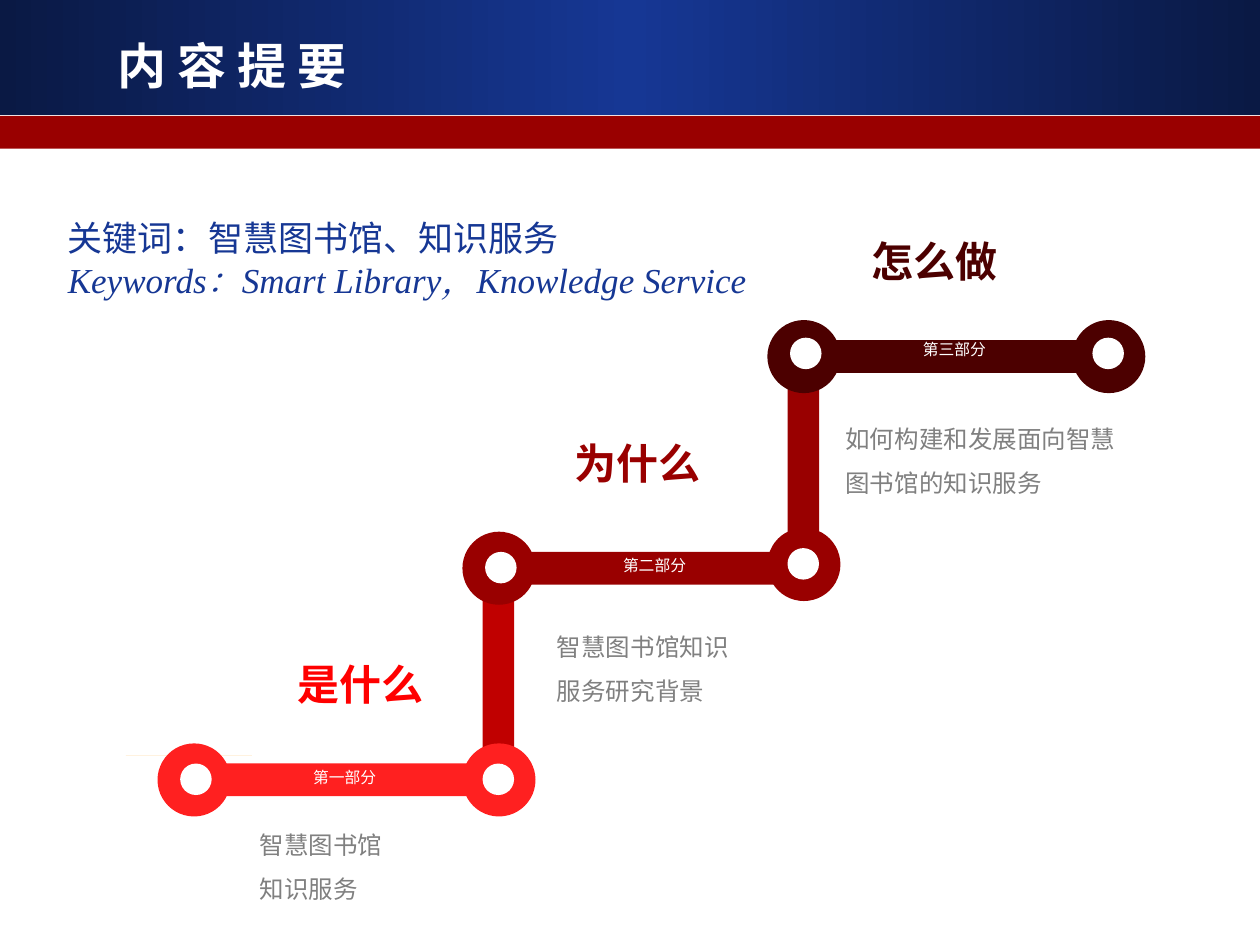
from copy import deepcopy
from dataclasses import dataclass
from typing import Optional

from pptx import Presentation
from pptx.dml.color import RGBColor
from pptx.enum.shapes import MSO_SHAPE as Shape
from pptx.enum.text import MSO_ANCHOR as Anchor, MSO_AUTO_SIZE as AutoSize, PP_ALIGN as Align
from pptx.oxml.ns import qn
from pptx.util import Inches, Pt

SANS, SERIF = "Noto Sans CJK SC", "Times New Roman"
COLORS = {
    "navy": "0A1944", "blue": "163794", "white": "FFFFFF", "grey": "808080",
    "orange": "FF9802", "bright": "FF2020", "red": "FF0000",
    "crimson": "C00000", "dark": "990000", "maroon": "4C0000",
}
RING, HOLE, BAR_W, BAR_H = 0.58, 0.25, 2.63, 0.26
RISER_W, RISER_H = 0.25, 2.1
STEP_X = 2.42


@dataclass
class Run:
    text: str
    size: float
    color: str
    font: str = SANS
    bold: bool = False
    italic: bool = False


@dataclass
class TextBox:
    box: tuple[float, float, float, float]
    lines: list[Run]
    inset: tuple[float, float] = (0.24, 0.12)
    align: Align = Align.LEFT
    wrap: bool = False
    spacing: Optional[float] = None
    autosize: AutoSize = AutoSize.SHAPE_TO_FIT_TEXT
    anchor: Anchor = Anchor.TOP


@dataclass
class Stage:
    """One stair: ring, bar, ring, and the riser up to the next stair."""
    y: float
    end_y: float
    color: str
    label: str
    label_at: tuple[float, float]
    hole_dy: float = 0.16
    riser_y: Optional[float] = None
    riser_color: str = "dark"


STAGES = [
    Stage(5.9, 5.9, "bright", "第一部分", (2.45, 6.09), riser_y=4.37, riser_color="crimson"),
    Stage(4.22, 4.19, "dark", "第二部分", (4.91, 4.41), riser_y=2.66),
    Stage(2.54, 2.54, "maroon", "第三部分", (7.29, 2.7), hole_dy=0.14),
]


def body(box: tuple[float, float, float, float], *lines: str) -> TextBox:
    return TextBox(box, [Run(t, 14, "grey") for t in lines], wrap=True, spacing=1.5)


def heading(text: str, color: str) -> list[Run]:
    return [Run(text, 24, color, bold=True)]


TEXTS = [
    TextBox((0.84, 0.25, 2, 0.53), [Run("内 容 提 要", 28, "white", bold=True)], (0, 0.05),
            Align.CENTER, autosize=AutoSize.NONE, anchor=Anchor.MIDDLE),
    TextBox((0.44, 1.67, 6.06, 0.77),
            [Run("关键词：智慧图书馆、知识服务", 20, "blue"),
             Run("Keywords：Smart Library，Knowledge Service", 20, "blue", SERIF, italic=True)],
            (0.1, 0.05), wrap=True),
    TextBox((6.68, 1.75, 1.49, 0.65), heading("怎么做", "maroon")),
    TextBox((4.32, 3.35, 1.69, 0.74), heading("为什么", "dark")),
    TextBox((1.96, 5.13, 1.6, 0.69), heading("是什么", "red"), (0.2, 0.1), Align.RIGHT),
    body((1.82, 6.35, 2.78, 0.95), "智慧图书馆", "知识服务"),
    body((6.47, 3.13, 2.63, 0.95), "如何构建和发展面向智慧图书馆的知识服务"),
    body((4.18, 4.78, 2.32, 0.95), "智慧图书馆知识", "服务研究背景"),
]


def rgb(name: str) -> RGBColor:
    return RGBColor.from_string(COLORS[name])


def paint(sp, color: str) -> None:
    sp.fill.solid()
    sp.fill.fore_color.rgb = rgb(color)
    sp.line.fill.background()
    sp.shadow.inherit = False


def add_shape(shapes, kind: Shape, x: float, y: float, w: float, h: float, color: str):
    sp = shapes.add_shape(kind, Inches(x), Inches(y), Inches(w), Inches(h))
    paint(sp, color)
    return sp


def add_pill(shapes, x: float, y: float, w: float, h: float, color: str) -> None:
    add_shape(shapes, Shape.ROUNDED_RECTANGLE, x, y, w, h, color).adjustments[0] = 0.5


def add_ring(shapes, x: float, y: float, hole_dx: float, hole_dy: float, color: str) -> None:
    add_shape(shapes, Shape.OVAL, x, y, RING, RING, color)
    add_shape(shapes, Shape.OVAL, x + hole_dx, y + hole_dy, HOLE, HOLE, "white")


def add_text(shapes, item: TextBox) -> None:
    tf = shapes.add_textbox(*map(Inches, item.box)).text_frame
    tf.word_wrap, tf.auto_size, tf.vertical_anchor = item.wrap, item.autosize, item.anchor
    tf.margin_left = tf.margin_right = Inches(item.inset[0])
    tf.margin_top = tf.margin_bottom = Inches(item.inset[1])
    for i, line in enumerate(item.lines):
        p = tf.add_paragraph() if i else tf.paragraphs[0]
        p.alignment, p.line_spacing = item.align, item.spacing
        r = p.add_run()
        r.text = line.text
        font = r.font
        font.name, font.size = line.font, Pt(line.size)
        font.bold, font.italic = line.bold, line.italic
        font.color.rgb = rgb(line.color)
        ea = r._r.get_or_add_rPr().makeelement(qn("a:ea"), {"typeface": line.font})
        r._r.rPr.find(qn("a:latin")).addnext(ea)


def add_header(shapes) -> None:
    band = add_shape(shapes, Shape.RECTANGLE, 0, 0, 10, 0.91, "navy")
    band.fill.gradient()
    band.fill.gradient_angle = 0
    stops = band._element.spPr.find(qn("a:gradFill")).find(qn("a:gsLst"))
    stops.append(deepcopy(stops[0]))
    for stop, pos, color in zip(band.fill.gradient_stops, (0, 0.5, 1), ("navy", "blue", "navy")):
        stop.position = pos
        stop.color.rgb = rgb(color)
    add_shape(shapes, Shape.RECTANGLE, 0, 0.92, 10, 0.26, "dark")


def add_marker(shapes) -> None:
    """Small triangle with blunted corners above the first ring."""
    points = [(1.41, 5.85), (1.39, 5.84), (1.39, 5.81), (1.52, 5.66), (1.54, 5.65),
              (1.55, 5.66), (1.68, 5.81), (1.68, 5.84), (1.66, 5.85)]
    builder = shapes.build_freeform(*points[0], scale=Inches(1))
    builder.add_line_segments(points[1:], close=True)
    paint(builder.convert_to_shape(), "orange")


def add_stage(shapes, stage: Stage, x: float) -> None:
    end_x = x + STEP_X
    add_pill(shapes, x + 0.06, stage.y + 0.16, BAR_W, BAR_H, stage.color)
    add_ring(shapes, x, stage.y, 0.18, stage.hole_dy, stage.color)
    label = Run(stage.label, 9, "white")
    add_text(shapes, TextBox((*stage.label_at, 0.57, 0.17), [label], (0, 0), Align.CENTER))
    if stage.riser_y is not None:
        add_pill(shapes, end_x + 0.16, stage.riser_y, RISER_W, RISER_H, stage.riser_color)
    add_ring(shapes, end_x, stage.end_y, 0.16, stage.hole_dy, stage.color)


def main() -> None:
    prs = Presentation()
    prs.slide_width, prs.slide_height = Inches(10), Inches(7.5)
    shapes = prs.slides.add_slide(prs.slide_layouts[6]).shapes
    add_header(shapes)
    add_marker(shapes)
    for i, stage in enumerate(STAGES):
        add_stage(shapes, stage, 1.25 + i * STEP_X)
    for item in TEXTS:
        add_text(shapes, item)
    prs.save("out.pptx")


if __name__ == "__main__":
    main()
